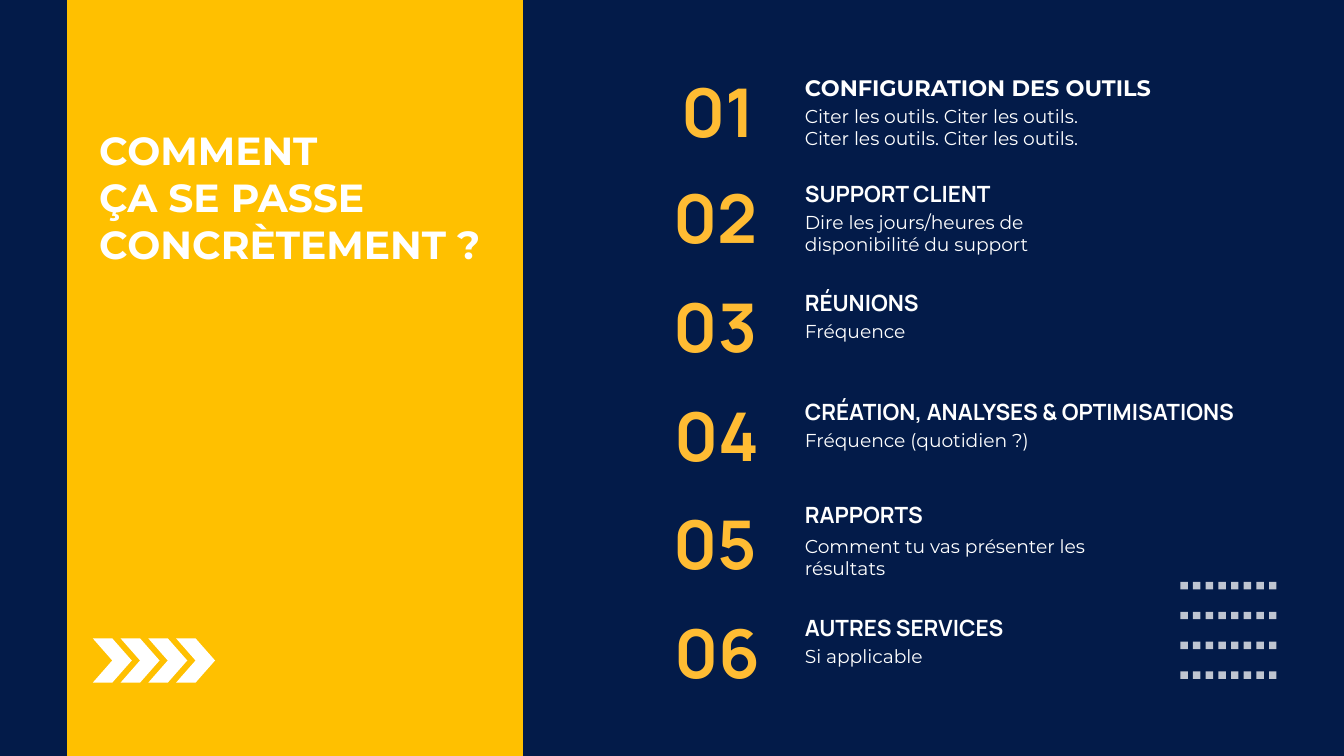
from dataclasses import dataclass

from lxml import etree
from pptx import Presentation
from pptx.dml.color import RGBColor
from pptx.enum import shapes, text
from pptx.oxml import ns
from pptx.util import Inches, Pt


@dataclass(frozen=True)
class Theme:
    navy: str = "031B49"
    yellow: str = "FFC000"
    amber: str = "FFBC33"
    white: str = "FFFFFF"
    title_size: int = 21
    number_size: int = 36
    heading_size: int = 12
    body_size: int = 10
    body_font: str = "Montserrat"
    display_font: str = "Manrope"


THEME = Theme()
WIDTH = 10
HEIGHT = WIDTH * 9 / 16

# Number left and top, heading, heading font, heading top,
# detail paragraphs, detail top and height
STEPS = [
    (4.88, 0.47, "CONFIGURATION DES OUTILS", THEME.body_font, 0.5,
     ["Citer les outils. Citer les outils."] * 2, 0.73, 0.77),
    (4.86, 1.26, "SUPPORT CLIENT", THEME.display_font, 1.29,
     ["Dire les jours/heures de disponibilité du support"], 1.52, 0.44),
    (4.86, 2.07, "RÉUNIONS", THEME.display_font, 2.1,
     ["Fréquence"], 2.33, 0.27),
    (4.87, 2.88, "CRÉATION, ANALYSES & OPTIMISATIONS", THEME.display_font, 2.91,
     ["Fréquence (quotidien ?)"], 3.14, 0.27),
    (4.86, 3.68, "RAPPORTS", THEME.display_font, 3.68,
     ["Comment tu vas présenter les résultats"], 3.93, 0.44),
    (4.87, 4.49, "AUTRES SERVICES", THEME.display_font, 4.52,
     ["Si applicable"], 4.75, 0.27),
]


def add_text(slide, box, paragraphs, *, size, font=THEME.body_font,
             color=THEME.white, bold=False, align=text.PP_ALIGN.LEFT,
             anchor=text.MSO_ANCHOR.TOP):
    frame = slide.shapes.add_textbox(*map(Inches, box)).text_frame
    frame.word_wrap = True
    frame.auto_size = text.MSO_AUTO_SIZE.SHAPE_TO_FIT_TEXT
    frame.vertical_anchor = anchor
    for index, words in enumerate(paragraphs):
        paragraph = frame.add_paragraph() if index else frame.paragraphs[0]
        paragraph.text = words
        paragraph.alignment = align
        for run in paragraph.runs:
            run.font.name = font
            run.font.size = Pt(size)
            run.font.bold = bold
            run.font.color.rgb = RGBColor.from_string(color)


def add_filled(parent, kind, box, color):
    shape = parent.shapes.add_shape(kind, *map(Inches, box))
    shape.shadow.inherit = False
    shape.fill.solid()
    shape.fill.fore_color.rgb = RGBColor.from_string(color)
    shape.line.fill.background()
    return shape


def add_dotted_line(parent, x, top, bottom):
    line = parent.shapes.add_connector(
        shapes.MSO_CONNECTOR.STRAIGHT, *map(Inches, (x, top, x, bottom)))
    line.line.width = Pt(4)
    line.line.color.rgb = RGBColor.from_string(THEME.white)
    properties = line._element.spPr
    outline = properties.find(ns.qn("a:ln"))
    etree.SubElement(outline.find(".//" + ns.qn("a:srgbClr")),
                     ns.qn("a:alpha"), val="75000")
    etree.SubElement(outline, ns.qn("a:prstDash"), val="dot")
    etree.SubElement(properties, ns.qn("a:effectLst"))


def add_title_band(slide, left, top, width, height):
    add_filled(slide, shapes.MSO_SHAPE.RECTANGLE,
               (left, top, width, height), THEME.yellow)
    add_text(slide, (left + 0.14, top + 0.89, 3.13, 1.16),
             ["COMMENT\nÇA SE PASSE\nCONCRÈTEMENT ?"],
             size=THEME.title_size, bold=True)
    add_chevrons(slide, left + 0.19, top + 4.75, 0.91, 0.33)


def add_chevrons(slide, left, top, width, height, count=4):
    group = slide.shapes.add_group_shape()
    chevron_width = 0.29
    pitch = (width - chevron_width) / (count - 1)
    for index in range(count):
        chevron = add_filled(group, shapes.MSO_SHAPE.CHEVRON,
                             (left + index * pitch, top, chevron_width, height),
                             THEME.white)
        chevron.adjustments[0] = 0.5


def add_step(slide, text_left, number, step):
    (number_left, top, heading, heading_font, heading_top,
     details, detail_top, detail_height) = step
    add_text(slide, (number_left, top, 0.93, 0.71), [f"{number:02d}"],
             size=THEME.number_size, font=THEME.display_font, color=THEME.amber,
             bold=True, align=text.PP_ALIGN.CENTER,
             anchor=text.MSO_ANCHOR.MIDDLE)
    add_text(slide, (text_left, detail_top, 2.59, detail_height), details,
             size=THEME.body_size)
    add_text(slide, (text_left, heading_top, 3.67, 0.3), [heading],
             size=THEME.heading_size, font=heading_font, bold=True)


def add_dot_grid(slide, left, top, width, height, columns=8):
    group = slide.shapes.add_group_shape()
    for column in range(columns):
        add_dotted_line(group, left + column * width / (columns - 1),
                        top, top + height)


def main():
    deck = Presentation()
    deck.slide_width, deck.slide_height = Inches(WIDTH), Inches(HEIGHT)
    slide = deck.slides.add_slide(deck.slide_layouts[6])
    slide.background.fill.solid()
    slide.background.fill.fore_color.rgb = RGBColor.from_string(THEME.navy)

    add_title_band(slide, 0.5, 0, 3.39, HEIGHT)
    for number, step in enumerate(STEPS, start=1):
        add_step(slide, 5.89, number, step)
    add_dot_grid(slide, 8.81, 4.33, 0.66, 0.85)
    deck.save("out.pptx")


if __name__ == "__main__":
    main()
